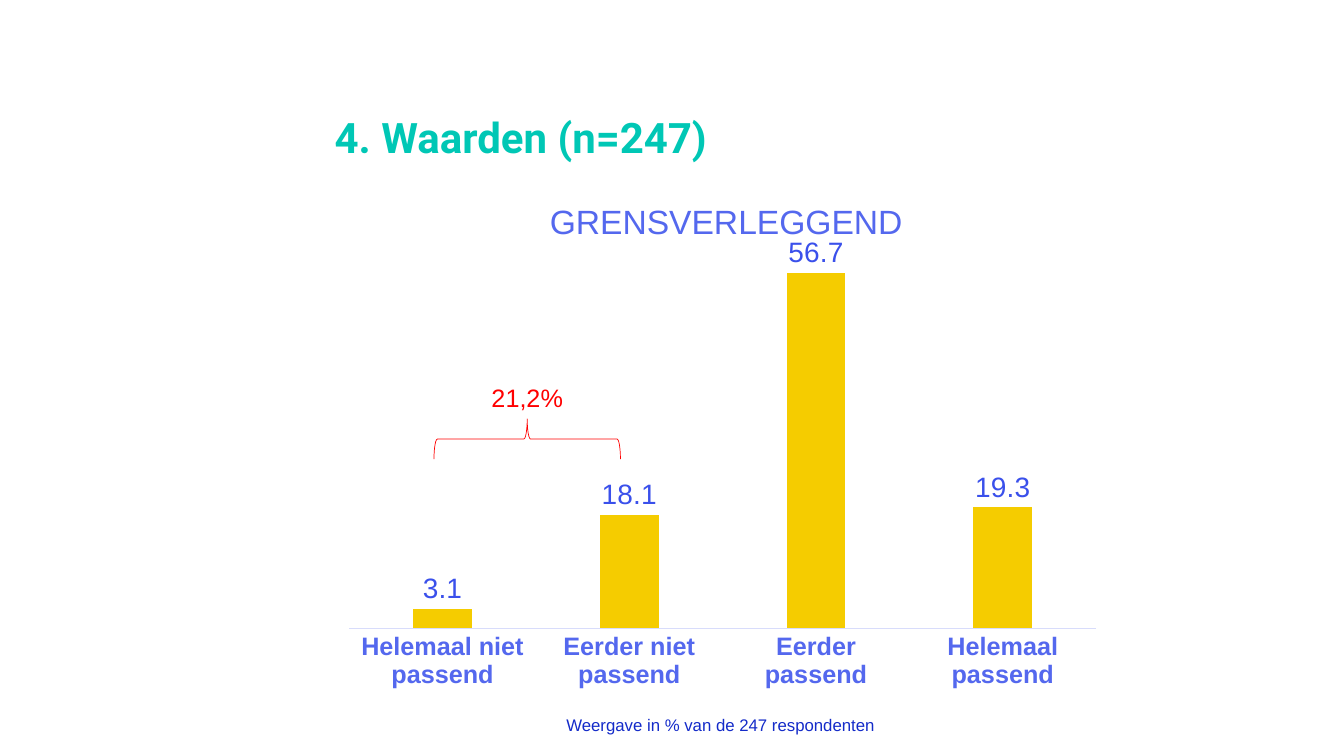
from lxml.etree import SubElement
from pptx import Presentation
from pptx.chart.data import CategoryChartData
from pptx.dml.color import RGBColor
from pptx.enum.chart import XL_CHART_TYPE as ChartType, XL_LABEL_POSITION as LabelPosition
from pptx.enum.chart import XL_TICK_LABEL_POSITION as TickLabels, XL_TICK_MARK as TickMark
from pptx.enum.shapes import MSO_SHAPE as Shape
from pptx.enum.text import MSO_ANCHOR as Anchor, MSO_AUTO_SIZE as AutoSize, PP_ALIGN as Align
from pptx.oxml.ns import qn
from pptx.util import Pt

COLORS = {
    "teal": "00C7B5",
    "navy": "142BC9",
    "blue": "3A50EB",
    "periwinkle": "5468EE",
    "axis": "D8DCFB",
    "yellow": "F5CC00",
    "red": "FF0000",
}

SCORES = {
    "Helemaal niet passend": 3.1,
    "Eerder niet passend": 18.1,
    "Eerder passend": 56.7,
    "Helemaal passend": 19.3,
}


def rgb(color):
    return RGBColor.from_string(COLORS[color])


def style_font(font, size, color, bold=False, name="Arial"):
    font.name = name
    font.size = Pt(size)
    font.bold = bold
    font.color.rgb = rgb(color)


def set_layout(parent, before, target, **fractions):
    for old in parent.findall(qn("c:layout")):
        parent.remove(old)
    layout = SubElement(parent, qn("c:layout"))
    manual = SubElement(layout, qn("c:manualLayout"))
    if target:
        SubElement(manual, qn("c:layoutTarget")).set("val", target)
    for side in ("x", "y"):
        SubElement(manual, qn(f"c:{side}Mode")).set("val", "edge")
    for side, fraction in fractions.items():
        SubElement(manual, qn(f"c:{side}")).set("val", str(fraction))
    before.addprevious(layout)


def add_heading(slide, text):
    heading = slide.shapes.title
    heading.left, heading.top, heading.width, heading.height = Pt(231.8), Pt(41.8), Pt(568.8), Pt(77.8)
    frame = heading.text_frame
    frame.auto_size = AutoSize.NONE
    frame.vertical_anchor = Anchor.BOTTOM
    paragraph = frame.paragraphs[0]
    paragraph.alignment = Align.LEFT
    paragraph.line_spacing = 0.9
    run = paragraph.add_run()
    run.text = text
    style_font(run.font, 30, "teal", bold=True, name="Roboto")


def add_label(slide, text, left, top, width, height, size, color, align=Align.LEFT, wrap=True):
    label = slide.shapes.add_textbox(Pt(left), Pt(top), Pt(width), Pt(height))
    frame = label.text_frame
    frame.word_wrap = wrap
    frame.auto_size = AutoSize.SHAPE_TO_FIT_TEXT
    paragraph = frame.paragraphs[0]
    paragraph.alignment = align
    run = paragraph.add_run()
    run.text = text
    style_font(run.font, size, color)


def add_brace(slide, left, top, width, height):
    brace = slide.shapes.add_shape(Shape.RIGHT_BRACE, Pt(left), Pt(top), Pt(width), Pt(height))
    brace.rotation = 270
    brace.shadow.inherit = False
    brace.fill.background()
    brace.line.color.rgb = rgb("red")
    brace.line.width = Pt(0.5)


def add_score_chart(slide, title):
    scores = CategoryChartData(number_format="0.0")
    scores.categories = list(SCORES)
    scores.add_series("Series 1", list(SCORES.values()))
    chart = slide.shapes.add_chart(
        ChartType.COLUMN_CLUSTERED, Pt(238.3), Pt(119.5), Pt(555.8), Pt(378.7), scores
    ).chart
    style_font(chart.font, 10, "navy")
    chart.has_legend = False

    chart.has_title = True
    run = chart.chart_title.text_frame.paragraphs[0].add_run()
    run.text = title
    style_font(run.font, 24, "periwinkle")
    chart.chart_title.include_in_layout = False

    answers = chart.category_axis
    answers.major_tick_mark = TickMark.NONE
    answers.format.line.color.rgb = rgb("axis")
    answers.format.line.width = Pt(0.75)
    style_font(answers.tick_labels.font, 18, "periwinkle", bold=True)

    percent = chart.value_axis
    percent.visible = False
    percent.has_major_gridlines = False
    percent.minimum_scale, percent.maximum_scale = 0, 60
    percent.tick_label_position = TickLabels.NONE

    plot = chart.plots[0]
    plot.vary_by_categories = False
    plot.gap_width, plot.overlap = 219, -27
    bars = plot.series[0]
    bars.format.fill.solid()
    bars.format.fill.fore_color.rgb = rgb("yellow")
    values = bars.data_labels
    values.show_value = True
    values.number_format = "0.0"
    values.number_format_is_linked = False
    values.position = LabelPosition.OUTSIDE_END
    style_font(values.font, 20, "blue")

    title_xml = chart.chart_title._element
    set_layout(title_xml, title_xml.find(qn("c:overlay")), None, x=0.27, y=0.05)
    plot_area = chart._chartSpace.chart.plotArea
    set_layout(plot_area, plot_area.find(qn("c:barChart")), "inner", x=0.02, y=0.16, w=0.96, h=0.71)


def main():
    deck = Presentation()
    deck.slide_width, deck.slide_height = Pt(960), Pt(540)
    slide = deck.slides.add_slide(deck.slide_layouts.get_by_name("Title Only"))
    add_heading(slide, "4. Waarden (n=247)")
    add_score_chart(slide, "GRENSVERLEGGEND")
    add_label(slide, "21,2%", 316.1, 269.3, 121, 28.8, 18, "red", align=Align.CENTER)
    add_brace(slide, 362.2, 247, 28.8, 133.2)
    add_label(slide, "Weergave in % van de 247 respondenten", 397.4, 506.9, 236.2, 21.6, 12, "navy", wrap=False)
    deck.save("out.pptx")


if __name__ == "__main__":
    main()
